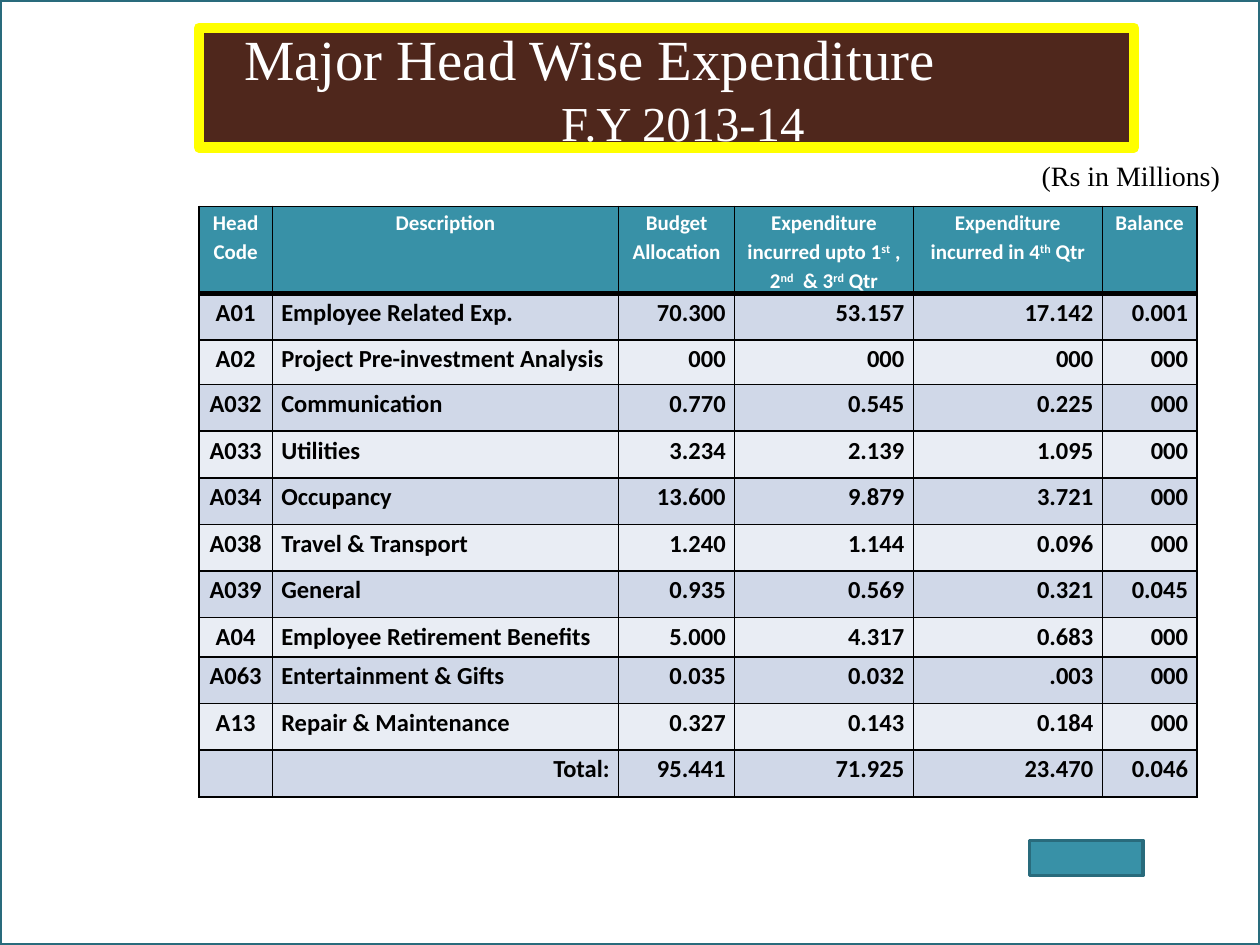
import dataclasses

import lxml.etree
import pptx
import pptx.dml.color
import pptx.enum.shapes
import pptx.enum.text
import pptx.oxml.ns
import pptx.util

Cm = pptx.util.Cm
Pt = pptx.util.Pt
Align = pptx.enum.text.PP_ALIGN
Anchor = pptx.enum.text.MSO_ANCHOR


@dataclasses.dataclass(frozen=True)
class Theme:
    white: str = "FFFFFF"
    black: str = "000000"
    brown: str = "4F271C"
    yellow: str = "FFFF00"
    teal: str = "3891A7"
    edge: str = "296B7C"
    bands: tuple = ("D0D8E8", "E9EDF4")
    serif: str = "Times New Roman"
    sans: str = "Calibri"
    title: float = 32.4
    year: float = 27.9
    note: float = 16
    head: float = 12
    body: float = 14


THEME = Theme()

WIDTHS = (1.48, 6.98, 2.34, 3.6, 3.81, 1.91)
HEAD_HIGH, ROW_HIGH = 1.27, 0.94
ODD_HIGHS = {2: 0.9, 8: 0.79}

# Text between a pair of ^ marks is raised.
HEADS = (
    "Head Code",
    "Description",
    "Budget Allocation",
    "Expenditure incurred upto 1^st^ , 2^nd^  & 3^rd^ Qtr",
    "Expenditure incurred in 4^th^ Qtr",
    "Balance",
)
ROWS = (
    ("A01", "Employee Related Exp.", "70.300", "53.157", "17.142", "0.001"),
    ("A02", "Project Pre-investment Analysis", "000", "000", "000", "000"),
    ("A032", "Communication", "0.770", "0.545", "0.225", "000"),
    ("A033", "Utilities", "3.234", "2.139", "1.095", "000"),
    ("A034", "Occupancy", "13.600", "9.879", "3.721", "000"),
    ("A038", "Travel & Transport", "1.240", "1.144", "0.096", "000"),
    ("A039", "General", "0.935", "0.569", "0.321", "0.045"),
    ("A04", "Employee Retirement Benefits", "5.000", "4.317", "0.683", "000"),
    ("A063", "Entertainment & Gifts", "0.035", "0.032", ".003", "000"),
    ("A13", "Repair & Maintenance", "0.327", "0.143", "0.184", "000"),
    ("", "Total:", "95.441", "71.925", "23.470", "0.046"),
)


def rgb(code):
    return pptx.dml.color.RGBColor.from_string(code)


def assign(item, values):
    for name, value in values.items():
        setattr(item, name, value)


def sub(parent, tag, **attrs):
    return lxml.etree.SubElement(parent, pptx.oxml.ns.qn(tag), attrs)


def style(font, size, face, color, bold=False):
    assign(font, {"size": Pt(size), "name": face, "bold": bold})
    font.color.rgb = rgb(color)


def place(shape, left, top, width, height):
    box = {"left": left, "top": top, "width": width, "height": height}
    assign(shape, {name: Cm(value) for name, value in box.items()})


def paint(shape, fill, line, width):
    """Fill and outline a shape, with rounded outline corners."""
    shape.fill.solid()
    shape.fill.fore_color.rgb = rgb(fill)
    shape.line.color.rgb = rgb(line)
    shape.line.width = Pt(width)
    sub(shape.line._get_or_add_ln(), "a:round")


def add_box(slide, box, fill, line):
    kind = pptx.enum.shapes.MSO_SHAPE.RECTANGLE
    shape = slide.shapes.add_shape(kind, *map(Cm, box))
    shape.shadow.inherit = False
    paint(shape, fill, line, 2)
    return shape


def add_title(slide):
    title = slide.shapes.title
    place(title, 4.01, 0.56, 18.85, 2.41)
    paint(title, THEME.brown, THEME.yellow, 6)
    frame = title.text_frame
    assign(frame, {"word_wrap": True, "vertical_anchor": Anchor.MIDDLE,
                   "auto_size": pptx.enum.text.MSO_AUTO_SIZE.NONE})
    frame.text = "Major Head Wise Expenditure\nF.Y 2013-14"
    first, second = frame.paragraphs
    first.alignment, second.alignment = Align.LEFT, Align.CENTER
    first._p.get_or_add_pPr().set("marL", str(Cm(0.66)))
    for para, size in ((first, THEME.title), (second, THEME.year)):
        style(para.runs[0].font, size, THEME.serif, THEME.white)


def add_note(slide, text):
    box = slide.shapes.add_textbox(Cm(20.75), Cm(3.07), Cm(4.45), Cm(0.94))
    box.text_frame.word_wrap = True
    run = box.text_frame.paragraphs[0].add_run()
    run.text = text
    style(run.font, THEME.note, THEME.serif, THEME.black)


def add_edges(cell, top=1, bottom=1):
    props = cell._tc.get_or_add_tcPr()
    for side, width in (("L", 1), ("R", 1), ("T", top), ("B", bottom)):
        line = sub(props, f"a:ln{side}", w=str(Pt(width)))
        sub(sub(line, "a:solidFill"), "a:srgbClr", val=THEME.black)


def write(cell, text, align, size, color):
    assign(cell, {"margin_left": Cm(0.18), "margin_right": Cm(0.18),
                  "margin_top": 0, "margin_bottom": 0})
    para = cell.text_frame.paragraphs[0]
    assign(para, {"alignment": align, "line_spacing": 1.15})
    if not text:
        para.font.size = Pt(size)
        return
    for index, part in enumerate(text.split("^")):
        run = para.add_run()
        run.text = part
        style(run.font, size, THEME.sans, color, True)
        if index % 2:
            run._r.get_or_add_rPr().set("baseline", "30000")


def align_for(row, col):
    if row == 0 or col == 0:
        return Align.CENTER
    if col == 1 and row < len(ROWS):
        return Align.LEFT
    return Align.RIGHT


def add_costs(slide):
    highs = [HEAD_HIGH] + [ODD_HIGHS.get(row, ROW_HIGH)
                           for row in range(1, len(ROWS) + 1)]
    size = (4.01, 4.16, sum(WIDTHS), sum(highs))
    table = slide.shapes.add_table(len(highs), len(WIDTHS),
                                   *map(Cm, size)).table
    table.horz_banding = False
    for column, width in zip(table.columns, WIDTHS):
        column.width = Cm(width)
    for row, (high, texts) in enumerate(zip(highs, (HEADS, *ROWS))):
        table.rows[row].height = Cm(high)
        if row == 0:
            fill, size, color = THEME.teal, THEME.head, THEME.white
        else:
            fill = THEME.bands[(row - 1) % 2]
            size, color = THEME.body, THEME.black
        for col, text in enumerate(texts):
            cell = table.cell(row, col)
            write(cell, text, align_for(row, col), size, color)
            add_edges(cell, 3 if row == 1 else 1, 3 if row == 0 else 1)
            cell.fill.solid()
            cell.fill.fore_color.rgb = rgb(fill)


def main():
    deck = pptx.Presentation()
    assign(deck, {"slide_width": Cm(25.4), "slide_height": Cm(19.05)})
    slide = deck.slides.add_slide(deck.slide_layouts[5])
    border = add_box(slide, (0, 0, 25.4, 19.05), THEME.white, THEME.edge)
    slide.shapes.title._element.addprevious(border._element)
    add_title(slide)
    add_note(slide, "(Rs in Millions)")
    add_costs(slide)
    add_box(slide, (20.75, 16.94, 2.29, 0.71), THEME.teal, THEME.edge)
    deck.save("out.pptx")


if __name__ == "__main__":
    main()
